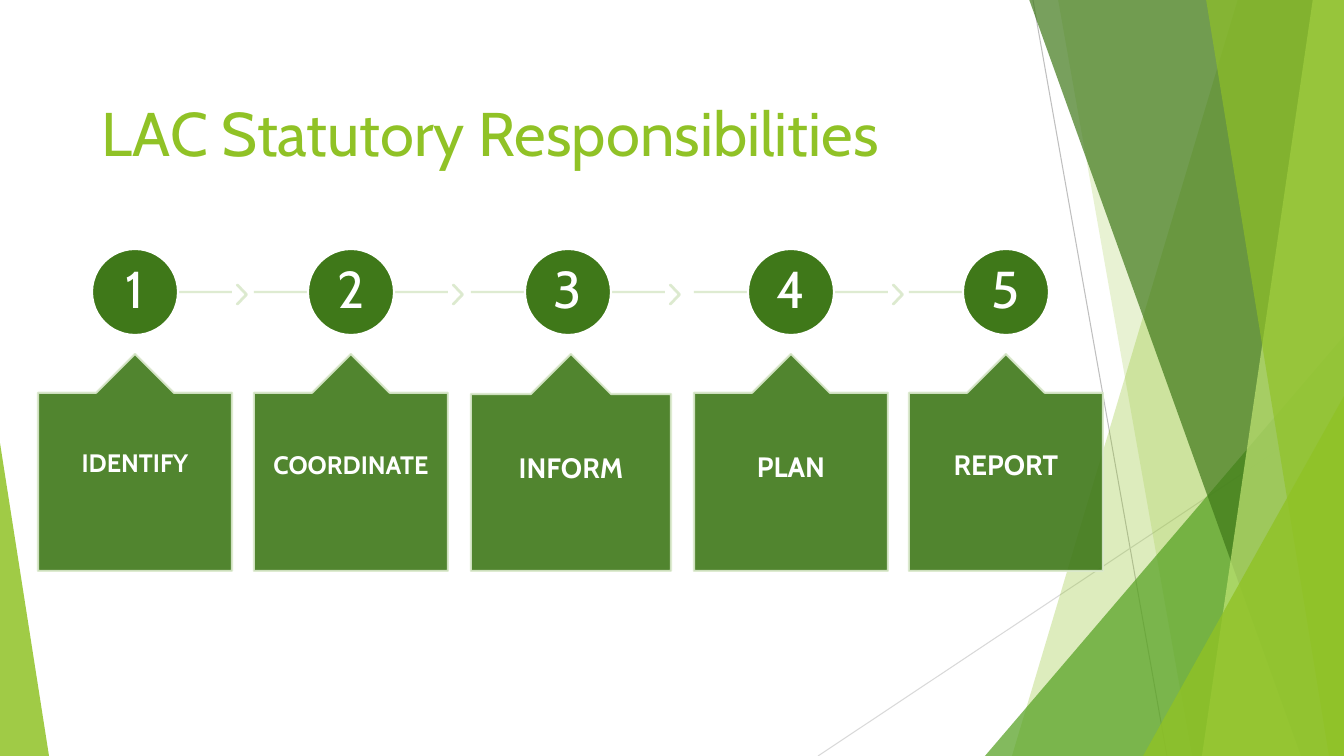
from dataclasses import dataclass

from lxml import etree
from pptx import Presentation
from pptx.dml.color import RGBColor
from pptx.enum.shapes import MSO_CONNECTOR, MSO_SHAPE
from pptx.enum.text import MSO_ANCHOR, MSO_AUTO_SIZE, PP_ALIGN
from pptx.oxml.ns import qn
from pptx.util import Emu, Pt

STRAIGHT = MSO_CONNECTOR.STRAIGHT
TRIANGLE = MSO_SHAPE.ISOSCELES_TRIANGLE
CHEVRON = MSO_SHAPE.CHEVRON
OVAL = MSO_SHAPE.OVAL
CALLOUT = MSO_SHAPE.UP_ARROW_CALLOUT
TOP, MIDDLE, BOTTOM = MSO_ANCHOR.TOP, MSO_ANCHOR.MIDDLE, MSO_ANCHOR.BOTTOM
LEFT, CENTER = PP_ALIGN.LEFT, PP_ALIGN.CENTER
NO_AUTOFIT = MSO_AUTO_SIZE.NONE

SLIDE_W, SLIDE_H = 1344, 756
EMU_PER_PX = 12192000 / SLIDE_W

FONT = "Cabin"
LIME, DARK_GREEN, PALE_GREEN, WHITE = "90C226", "3F7819", "DBE9CD", "FFFFFF"


@dataclass
class Ray:
    start: tuple[int, int]
    end: tuple[int, int]
    color: str


@dataclass
class Band:
    """Facet reaching the right slide edge, with a slanted left side."""
    top_x: int
    bottom_x: int
    color: str
    alpha: int


@dataclass
class Wedge:
    """Triangle standing on the bottom slide edge."""
    left: int
    top: int
    width: int
    apex: float
    color: str
    alpha: int


@dataclass
class Step:
    left: int
    label: str
    label_size: int
    label_top: int
    card_width: int = 194


RAYS = [
    Ray((1033, 0), (1167, SLIDE_H), "BFBFBF"),
    Ray((SLIDE_W, 406), (818, SLIDE_H), "D9D9D9"),
]
FACETS = [
    Band(1238, 1012, LIME, 30),
    Band(1058, 1192, LIME, 20),
    Wedge(985, 336, 359, 1, "54A021", 72),
    Band(1029, 1301, DARK_GREEN, 70),
    Band(1313, 1202, "C0E474", 70),
    Band(1206, 1329, LIME, 65),
    Wedge(1143, 396, 201, 1, LIME, 80),
    Wedge(0, 443, 49, 0, LIME, 85),
]
STEPS = [
    Step(38, "IDENTIFY", 18, 451),
    Step(254, "COORDINATE", 18, 453),
    Step(471, "INFORM", 20, 454, 200),
    Step(694, "PLAN", 20, 453),
    Step(909, "REPORT", 20, 451),
]
STEP_WIDTH = 194
TRACK_Y = 292
CIRCLE = 86


def px(length: int) -> Emu:
    return Emu(round(length * EMU_PER_PX))


def rgb(color: str) -> RGBColor:
    return RGBColor.from_string(color)


def set_alpha(shape, alpha: int) -> None:
    for color in shape._element.spPr.iter(qn("a:srgbClr")):
        etree.SubElement(color, qn("a:alpha")).set("val", str(alpha * 1000))


def paint(shape, fill: str, line: str | None = None, alpha: int = 100) -> None:
    shape.shadow.inherit = False
    shape.fill.solid()
    shape.fill.fore_color.rgb = rgb(fill)
    if line:
        shape.line.color.rgb = rgb(line)
        shape.line.width = Pt(1.5)
    else:
        shape.line.fill.background()
    if alpha < 100:
        set_alpha(shape, alpha)


def add_preset(slide, kind, left: int, top: int, width: int, height: int, *adjustments: float):
    shape = slide.shapes.add_shape(kind, px(left), px(top), px(width), px(height))
    for index, value in enumerate(adjustments):
        shape.adjustments[index] = value
    return shape


def add_line(slide, start: tuple[int, int], end: tuple[int, int],
             color: str, width: float, alpha: int = 100) -> None:
    line = slide.shapes.add_connector(STRAIGHT, *map(px, start + end))
    line.line.color.rgb = rgb(color)
    line.line.width = Pt(width)
    if alpha < 100:
        set_alpha(line, alpha)
    etree.SubElement(line._element.spPr, qn("a:effectLst"))


def write(shape, text: str, size: int, color: str, anchor, align,
          inset: int, spacing: float = 1.0, bold: bool = False) -> None:
    frame = shape.text_frame
    frame.text = text
    frame.word_wrap = True
    frame.auto_size = NO_AUTOFIT
    frame.vertical_anchor = anchor
    frame.margin_left = frame.margin_right = px(inset)
    frame.margin_top = frame.margin_bottom = px(inset // 2)
    paragraph = frame.paragraphs[0]
    paragraph.alignment = align
    paragraph.line_spacing = spacing
    paragraph.font.name = FONT
    paragraph.font.size = Pt(size)
    paragraph.font.bold = bold
    paragraph.font.color.rgb = rgb(color)


def add_facet(slide, facet: Band | Wedge) -> None:
    if isinstance(facet, Band):
        outline = slide.shapes.build_freeform(facet.top_x, -1, scale=EMU_PER_PX)
        outline.add_line_segments(
            [(SLIDE_W, -1), (SLIDE_W, SLIDE_H), (facet.bottom_x, SLIDE_H)], close=True)
        shape = outline.convert_to_shape()
    else:
        shape = add_preset(slide, TRIANGLE, facet.left, facet.top, facet.width,
                           SLIDE_H - facet.top, facet.apex)
    paint(shape, facet.color, alpha=facet.alpha)


def add_step(slide, number: int, step: Step) -> None:
    center = step.left + STEP_WIDTH // 2
    first, last = number == 1, number == len(STEPS)

    # Track and chevron towards the next step
    track_start = center + 11 if first else step.left
    track_end = center if last else step.left + STEP_WIDTH
    add_line(slide, (track_start, TRACK_Y), (track_end, TRACK_Y), PALE_GREEN, 1.5, 90)
    if not last:
        chevron = add_preset(slide, CHEVRON, track_end + 5, 285, 10, 19, 0.9)
        paint(chevron, PALE_GREEN, PALE_GREEN, 90)

    # Numbered circle
    circle = add_preset(slide, OVAL, center - CIRCLE // 2, TRACK_Y - CIRCLE // 2, CIRCLE, CIRCLE)
    paint(circle, DARK_GREEN, WHITE)
    write(circle, str(number), 37, WHITE, MIDDLE, CENTER, 3, 0.9)

    # Card with its label
    card = add_preset(slide, CALLOUT, step.left, 354, step.card_width, 217, 0.5, 0.2, 0.2, 1)
    paint(card, DARK_GREEN, PALE_GREEN, 90)
    label = slide.shapes.add_textbox(
        px(step.left), px(step.label_top), px(step.card_width), px(40))
    write(label, step.label, step.label_size, WHITE, TOP, CENTER, 0, 0.9, True)


def main() -> None:
    deck = Presentation()
    deck.slide_width, deck.slide_height = px(SLIDE_W), px(SLIDE_H)
    slide = deck.slides.add_slide(deck.slide_layouts[5])

    # Background facets
    for ray in RAYS:
        add_line(slide, ray.start, ray.end, ray.color, 0.75)
    for facet in FACETS:
        add_facet(slide, facet)

    # Title
    title = slide.shapes.title
    title.left, title.top, title.width, title.height = map(px, (92, 33, 921, 141))
    write(title, "LAC Statutory Responsibilities", 44, LIME, BOTTOM, LEFT, 10)

    # Process steps
    for number, step in enumerate(STEPS, start=1):
        add_step(slide, number, step)

    deck.save("out.pptx")


if __name__ == "__main__":
    main()
